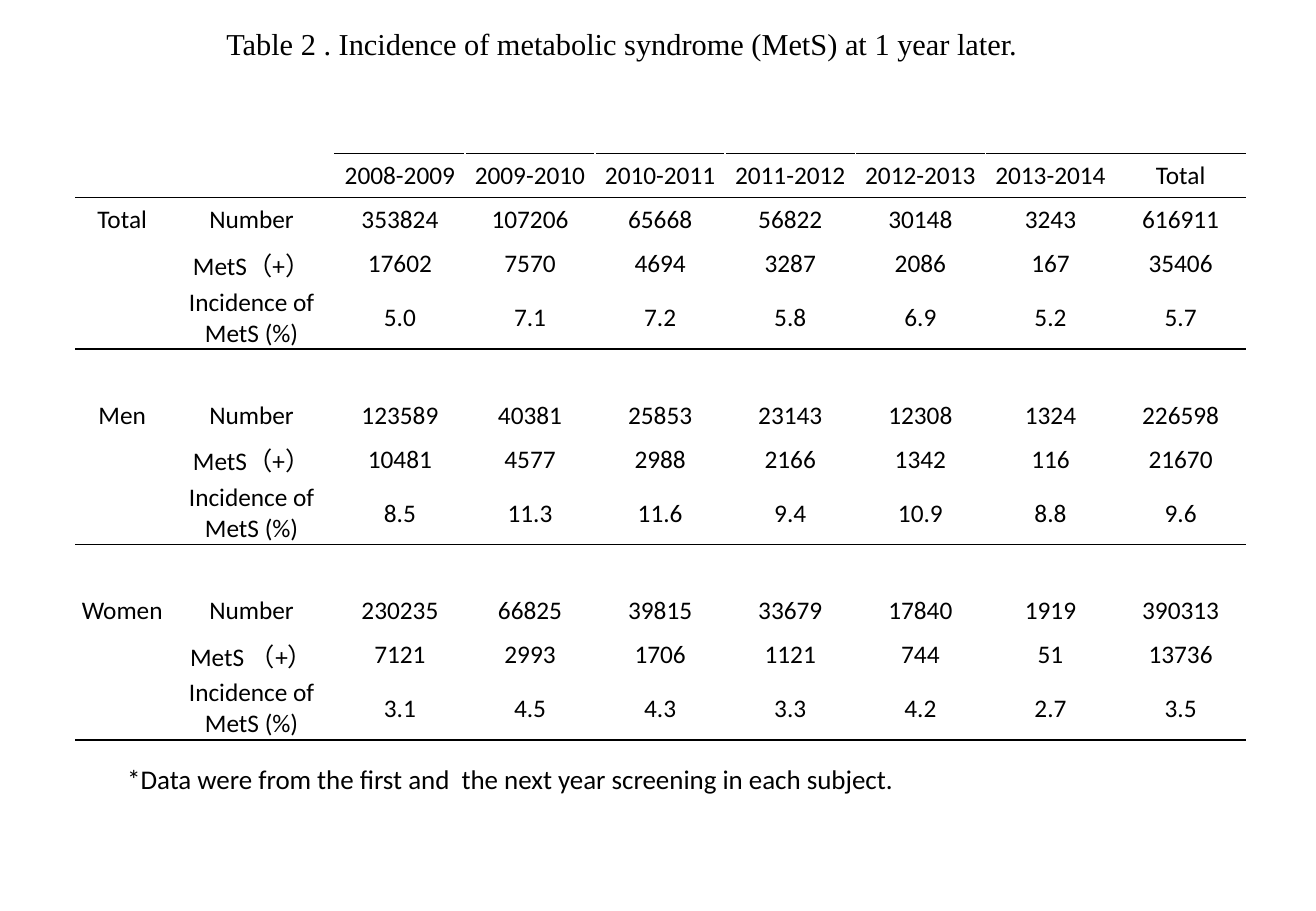
from dataclasses import dataclass

from lxml.etree import SubElement
from pptx import Presentation
from pptx.dml.color import RGBColor
from pptx.enum.text import MSO_ANCHOR as Anchor, MSO_AUTO_SIZE as AutoSize, PP_ALIGN as Align
from pptx.oxml.ns import qn
from pptx.util import Cm, Pt

BLACK, WHITE = "000000", "FFFFFF"
PERIODS = ["2008-2009", "2009-2010", "2010-2011", "2011-2012", "2012-2013", "2013-2014", "Total"]
LABEL_WIDTHS, VALUE_WIDTH = [1.93, 3.48], 2.72
ROW_HEIGHT, INCIDENCE_HEIGHT = 0.92, 1.31


@dataclass
class Group:
    name: str
    mets_label: str
    number: list[str]
    mets: list[str]
    incidence: list[str]


@dataclass
class Caption:
    text: str
    left: float
    top: float
    width: float
    height: float
    size: int
    font: str
    align: Align
    wrap: bool


GROUPS = [
    Group("Total", "MetS（+）",
          "353824 107206 65668 56822 30148 3243 616911".split(),
          "17602 7570 4694 3287 2086 167 35406".split(),
          "5.0 7.1 7.2 5.8 6.9 5.2 5.7".split()),
    Group("Men", "MetS（+）",
          "123589 40381 25853 23143 12308 1324 226598".split(),
          "10481 4577 2988 2166 1342 116 21670".split(),
          "8.5 11.3 11.6 9.4 10.9 8.8 9.6".split()),
    Group("Women", "MetS （+）",
          "230235 66825 39815 33679 17840 1919 390313".split(),
          "7121 2993 1706 1121 744 51 13736".split(),
          "3.1 4.5 4.3 3.3 4.2 2.7 3.5".split()),
]
CAPTIONS = [
    Caption("Table 2 . Incidence of metabolic syndrome (MetS) at 1 year later.",
            0, 0.41, 26.01, 1.02, 18, "Times New Roman", Align.CENTER, True),
    Caption("*Data were from the first and  the next year screening in each subject.",
            2.41, 15.82, 16.74, 0.94, 16, "Calibri", Align.LEFT, False),
]


def color(value: str) -> RGBColor:
    return RGBColor.from_string(value)


def style_paragraph(para, size: int, font: str, align: Align) -> None:
    para.alignment = align
    para.font.size = Pt(size)
    para.font.name = font
    para.font.color.rgb = color(BLACK)


def add_caption(page, caption: Caption) -> None:
    box = page.shapes.add_textbox(Cm(caption.left), Cm(caption.top), Cm(caption.width), Cm(caption.height))
    frame = box.text_frame
    frame.word_wrap = caption.wrap
    frame.auto_size = AutoSize.SHAPE_TO_FIT_TEXT
    frame.text = caption.text
    style_paragraph(frame.paragraphs[0], caption.size, caption.font, caption.align)


def add_borders(cell, top: str, bottom: str) -> None:
    properties = cell._tc.get_or_add_tcPr()
    for side, value in (("L", WHITE), ("R", WHITE), ("T", top), ("B", bottom)):
        line = SubElement(properties, qn(f"a:ln{side}"), w=str(Pt(1)))
        SubElement(SubElement(line, qn("a:solidFill")), qn("a:srgbClr"), val=value)


def table_rows(groups: list[Group]) -> list[list[str]]:
    blank = [""] * (len(LABEL_WIDTHS) + len(PERIODS))
    rows = [blank, ["", "", *PERIODS]]
    for index, group in enumerate(groups):
        if index:
            rows.append(blank)
        rows += [[group.name, "Number", *group.number],
                 ["", group.mets_label, *group.mets],
                 ["", "Incidence of MetS (%)", *group.incidence]]
    return rows


def add_incidence_table(page, rows: list[list[str]]) -> None:
    widths = LABEL_WIDTHS + [VALUE_WIDTH] * len(PERIODS)
    heights = [INCIDENCE_HEIGHT if row[1].startswith("Incidence") else ROW_HEIGHT for row in rows]
    table = page.shapes.add_table(len(rows), len(widths), Cm(1.59), Cm(2.29),
                                  Cm(sum(widths)), Cm(sum(heights))).table
    table.first_row = table.horz_banding = False
    for column, width in zip(table.columns, widths):
        column.width = Cm(width)
    for row, height in zip(table.rows, heights):
        row.height = Cm(height)

    # Empty top row: one cell above the labels, one above the periods
    table.cell(0, 0).merge(table.cell(0, 1))
    table.cell(0, 2).merge(table.cell(0, 7))

    def rule_below(row: int, column: int) -> str:
        ruled = (row == 0 and column >= len(LABEL_WIDTHS)) or row == 1 or heights[row] == INCIDENCE_HEIGHT
        return BLACK if ruled else WHITE

    for r, texts in enumerate(rows):
        for c, text in enumerate(texts):
            cell = table.cell(r, c)
            if cell.is_spanned:
                continue
            cell.margin_left = cell.margin_right = cell.margin_top = Cm(0.03)
            cell.margin_bottom = Cm(0)
            cell.vertical_anchor = Anchor.MIDDLE
            cell.text = text
            style_paragraph(cell.text_frame.paragraphs[0], 15, "Calibri", Align.CENTER)
            add_borders(cell, rule_below(r - 1, c) if r else WHITE, rule_below(r, c))
            cell.fill.background()


def main() -> None:
    deck = Presentation()
    deck.slide_width, deck.slide_height = Cm(27.51), Cm(19.05)
    page = deck.slides.add_slide(deck.slide_layouts[6])
    add_incidence_table(page, table_rows(GROUPS))
    # Title and footnote
    for caption in CAPTIONS:
        add_caption(page, caption)
    deck.save("out.pptx")


if __name__ == "__main__":
    main()
